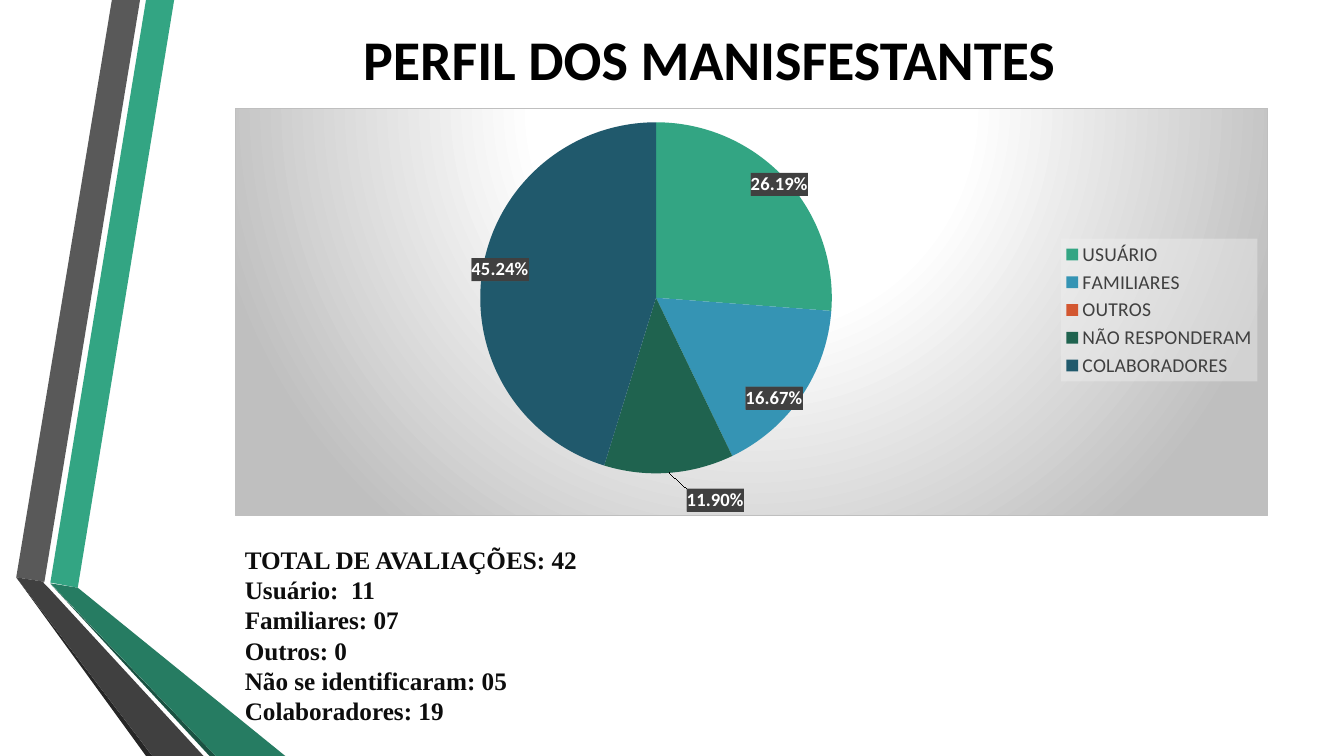
from lxml.etree import SubElement
from pptx import Presentation
from pptx.chart.data import CategoryChartData
from pptx.dml.color import RGBColor
from pptx.enum.chart import XL_CHART_TYPE as ChartType, XL_LEGEND_POSITION as LegendPos
from pptx.enum.text import MSO_ANCHOR as Anchor, MSO_AUTO_SIZE as AutoSize, PP_ALIGN as Align
from pptx.oxml import parse_xml
from pptx.oxml.ns import nsdecls, qn
from pptx.util import Cm, Pt

WIDTH, HEIGHT = 33.87, 19.05
RIBBONS = [
    ("33A583", [(1.27, 14.68), (1.96, 14.81), (4.39, 0), (3.68, 0)]),
    ("595959", [(3.53, 0), (2.82, 0), (0.41, 14.55), (1.12, 14.66)]),
    ("262626", [(0.41, 14.55), (3.68, HEIGHT), (3.84, HEIGHT)]),
    ("1A5242", [(1.27, 14.71), (5.28, HEIGHT), (5.44, HEIGHT)]),
    ("267C62", [(1.27, 14.7), (5.44, HEIGHT), (7.19, HEIGHT), (1.96, 14.81)]),
    ("404040", [(5.13, HEIGHT), (1.22, 14.81), (1.09, 14.68), (1.12, 14.66),
                (0.41, 14.55), (3.84, HEIGHT)]),
]
PROFILES = [
    ("USUÁRIO", 26.19, "33A583", (0.057, -0.132)),
    ("FAMILIARES", 16.67, "3594B4", (0.044, 0.125)),
    ("OUTROS", 0, "D35731", None),
    ("NÃO RESPONDERAM", 11.9, "1F634F", (0.051, 0.282)),
    ("COLABORADORES", 45.24, "20596C", (-0.067, -0.037)),
]
TOTALS = ["TOTAL DE AVALIAÇÕES: 42", "Usuário:  11", "Familiares: 07", "Outros: 0",
          "Não se identificaram: 05", "Colaboradores: 19"]


def rgb(color):
    """Turn a hex string into a colour."""
    return RGBColor.from_string(color)


def set_font(font, name="Calibri", size=14, color="000000", bold=False):
    """Format a font."""
    font.name, font.size, font.bold = name, Pt(size), bold
    font.color.rgb = rgb(color)


def add_text(p, text, align=None, **fmt):
    """Add a formatted run to a paragraph."""
    p.alignment = align
    r = p.add_run()
    r.text = text
    set_font(r.font, **fmt)


def place(sp, box):
    """Move a shape into a box given in centimetres."""
    sp.left, sp.top, sp.width, sp.height = map(Cm, box)


def add_ribbons(s, x, y):
    """Draw the folded ribbons with their corner at x, y."""
    for color, points in RIBBONS:
        pts = [(Cm(x + px), Cm(y + py)) for px, py in points]
        builder = s.shapes.build_freeform(*pts[0], scale=1.0)
        builder.add_line_segments(pts[1:], close=True)
        sp = builder.convert_to_shape()
        sp.shadow.inherit = False
        sp.fill.solid()
        sp.fill.fore_color.rgb = rgb(color)
        sp.line.fill.background()


def add_title(s, box):
    """Fill the title placeholder."""
    sp = s.shapes.title
    place(sp, box)
    tf = sp.text_frame
    tf.vertical_anchor = Anchor.MIDDLE
    add_text(tf.paragraphs[0], "PERFIL DOS MANISFESTANTES ", Align.CENTER, size=40, bold=True)


def set_layout(parent, **values):
    """Give a chart part a manual layout."""
    for old in parent.findall(qn("c:layout")):
        parent.remove(old)
    layout = parse_xml(f"<c:layout {nsdecls('c')}/>")
    manual = SubElement(layout, qn("c:manualLayout"))
    for tag, value in values.items():
        SubElement(manual, qn(f"c:{tag}")).set("val", str(value))
    return layout


def pie_labels():
    """Build the percentage labels, shifted from the slice centres."""
    body = """<c:numFmt formatCode="0.00%" sourceLinked="0"/>
      <c:spPr><a:pattFill prst="dkVert"><a:fgClr><a:srgbClr val="404040"/></a:fgClr>
        <a:bgClr><a:srgbClr val="595959"/></a:bgClr></a:pattFill></c:spPr>
      <c:txPr><a:bodyPr/><a:p><a:pPr><a:defRPr sz="1330" b="1"><a:solidFill>
        <a:srgbClr val="FFFFFF"/></a:solidFill><a:latin typeface="Calibri"/></a:defRPr></a:pPr>
        <a:endParaRPr lang="pt-BR"/></a:p></c:txPr><c:dLblPos val="ctr"/>
      <c:showLegendKey val="0"/><c:showVal val="0"/><c:showCatName val="0"/>
      <c:showSerName val="0"/><c:showPercent val="1"/><c:showBubbleSize val="0"/>"""
    labels = ""
    for i, (_, _, _, shift) in enumerate(PROFILES):
        inner = '<c:delete val="1"/>'
        if shift:
            inner = (f'<c:layout><c:manualLayout><c:x val="{shift[0]}"/><c:y val="{shift[1]}"/>'
                     f'</c:manualLayout></c:layout>{body}')
        labels += f'<c:dLbl><c:idx val="{i}"/>{inner}</c:dLbl>'
    return parse_xml(f"<c:dLbls {nsdecls('c', 'a')}>{labels}{body}"
                     '<c:showLeaderLines val="1"/></c:dLbls>')


def chart_background():
    """Build the radial grey background with its border."""
    stops = "".join(f'<a:gs pos="{pos}"><a:srgbClr val="{color}"/></a:gs>' for pos, color in
                    [(0, "FFFFFF"), (39000, "FFFFFF"), (100000, "BFBFBF")])
    return parse_xml(f"""<c:spPr {nsdecls('c', 'a')}><a:gradFill><a:gsLst>{stops}</a:gsLst>
      <a:path path="circle"><a:fillToRect l="50000" t="-80000" r="50000" b="180000"/></a:path>
      </a:gradFill><a:ln w="9525"><a:solidFill><a:srgbClr val="BFBFBF"/></a:solidFill></a:ln>
      </c:spPr>""")


def add_pie(s, box):
    """Add the pie chart of the profiles."""
    data = CategoryChartData()
    data.categories = [name for name, *_ in PROFILES]
    data.add_series("Series 1", [value for _, value, *_ in PROFILES])
    chart = s.shapes.add_chart(ChartType.PIE, *map(Cm, box), data).chart
    chart.has_title = False
    set_font(chart.font, size=10)
    plot = chart.plots[0]
    plot.vary_by_categories = True
    series = plot.series[0]
    for i, (_, _, color, _) in enumerate(PROFILES):
        fill = series.points[i].format.fill
        fill.solid()
        fill.fore_color.rgb = rgb(color)
    series._element.find(qn("c:cat")).addprevious(pie_labels())

    chart.has_legend = True
    legend = chart.legend
    legend.position = LegendPos.RIGHT
    legend.include_in_layout = False
    set_font(legend.font, size=14, color="404040")
    el = legend._element
    el.find(qn("c:legendPos")).addnext(set_layout(
        el, xMode="edge", yMode="edge", x=0.8, y=0.32, w=0.19, h=0.35))
    el.find(qn("c:overlay")).addnext(parse_xml(
        f"<c:spPr {nsdecls('c', 'a')}><a:solidFill><a:srgbClr val='F2F2F2'>"
        "<a:alpha val='39000'/></a:srgbClr></a:solidFill></c:spPr>"))
    area = chart.element.find(f".//{qn('c:plotArea')}")
    area.insert(0, set_layout(area, layoutTarget="inner", xMode="edge", yMode="edge",
                              x=0.237, y=0.034, w=0.341, h=0.862))
    chart.element.find(qn("c:chart")).addnext(chart_background())


def add_totals(s, box):
    """List the number of answers by profile."""
    tf = s.shapes.add_textbox(*map(Cm, box)).text_frame
    tf.word_wrap = True
    tf.auto_size = AutoSize.SHAPE_TO_FIT_TEXT
    for i, line in enumerate(TOTALS):
        p = tf.add_paragraph() if i else tf.paragraphs[0]
        add_text(p, line, name="Times New Roman", size=18, color="0D0D0D", bold=True)


def main():
    """Build the slide and save it."""
    prs = Presentation()
    prs.slide_width, prs.slide_height = Cm(WIDTH), Cm(HEIGHT)
    s = prs.slides.add_slide(prs.slide_layouts[5])
    add_ribbons(s, 0, 0)
    add_title(s, (4.11, 0.23, 27.84, 2.49))
    add_pie(s, (5.92, 2.72, 26.04, 10.29))
    add_totals(s, (5.92, 13.59, 10.11, 5))
    prs.save("out.pptx")


if __name__ == "__main__":
    main()
